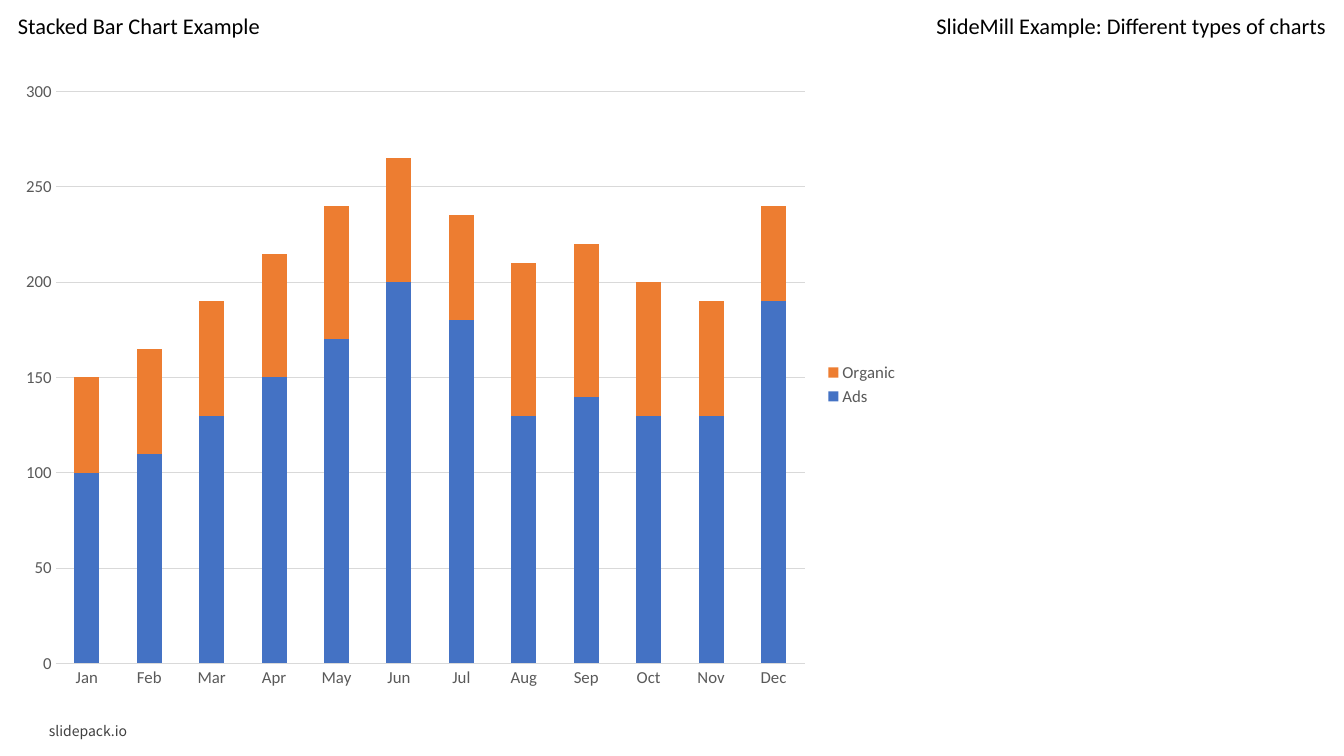
import pptx
import pptx.chart.data
import pptx.dml.color
import pptx.enum.chart
import pptx.enum.text
import pptx.util

EMU_PER_PX = 914400 / 100.8
COLORS = {
    "text": "000000",
    "footer": "404040",
    "axis_text": "595959",
    "grid": "D9D9D9",
    "ads": "4472C4",
    "organic": "ED7D31",
}
MONTHS = ["Jan", "Feb", "Mar", "Apr", "May", "Jun",
          "Jul", "Aug", "Sep", "Oct", "Nov", "Dec"]
ADS = [100, 110, 130, 150, 170, 200, 180, 130, 140, 130, 130, 190]
ORGANIC = [50, 55, 60, 65, 70, 65, 55, 80, 80, 70, 60, 50]


def px(n):
    return pptx.util.Emu(round(n * EMU_PER_PX))


def rgb(name):
    return pptx.dml.color.RGBColor.from_string(COLORS[name])


def set_font(font, size, color, name="Calibri"):
    font.name = name
    font.size = pptx.util.Pt(size)
    font.color.rgb = rgb(color)


def set_line(line, color):
    line.color.rgb = rgb(color)
    line.width = pptx.util.Pt(0.75)


def add_text(s, box, text, align=pptx.enum.text.PP_ALIGN.LEFT):
    """Add a one-line text box and return its shape."""
    sp = s.shapes.add_textbox(*map(px, box))
    tf = sp.text_frame
    tf.text = text
    tf.word_wrap = False
    p = tf.paragraphs[0]
    p.alignment = align
    set_font(p.runs[0].font, 16, "text")
    return sp


def add_footer(s, box, text):
    tf = add_text(s, box, text).text_frame
    tf.word_wrap = True
    tf.vertical_anchor = pptx.enum.text.MSO_ANCHOR.MIDDLE
    set_font(tf.paragraphs[0].runs[0].font, 10, "footer", "Noto Sans CJK JP")


def style_axes(chart):
    for axis in (chart.category_axis, chart.value_axis):
        axis.major_tick_mark = pptx.enum.chart.XL_TICK_MARK.NONE
        axis.minor_tick_mark = pptx.enum.chart.XL_TICK_MARK.NONE
        set_font(axis.tick_labels.font, 12, "axis_text")
    set_line(chart.category_axis.format.line, "grid")
    values = chart.value_axis
    values.minimum_scale = 0
    values.maximum_scale = 300
    values.major_unit = 50
    values.format.line.fill.background()
    values.has_major_gridlines = True
    set_line(values.major_gridlines.format.line, "grid")


def add_stacked_chart(s, box):
    data = pptx.chart.data.CategoryChartData()
    data.categories = MONTHS
    data.add_series("Ads", ADS)
    data.add_series("Organic", ORGANIC)
    chart = s.shapes.add_chart(
        pptx.enum.chart.XL_CHART_TYPE.COLUMN_STACKED, *map(px, box), data).chart
    set_font(chart.font, 10, "text")
    chart.has_title = False
    style_axes(chart)

    plot = chart.plots[0]
    plot.gap_width = 150
    plot.overlap = 100
    plot.vary_by_categories = False
    for series, color in zip(plot.series, ("ads", "organic")):
        series.format.fill.solid()
        series.format.fill.fore_color.rgb = rgb(color)

    chart.has_legend = True
    chart.legend.position = pptx.enum.chart.XL_LEGEND_POSITION.RIGHT
    chart.legend.include_in_layout = False
    set_font(chart.legend.font, 12, "axis_text")


def main():
    prs = pptx.Presentation()
    prs.slide_width = px(1344)
    prs.slide_height = px(756)
    s = prs.slides.add_slide(prs.slide_layouts[6])
    add_footer(s, (39, 718, 293, 25), "slidepack.io")
    add_text(s, (909, 7, 427, 37), "SlideMill Example: Different types of charts",
             pptx.enum.text.PP_ALIGN.RIGHT)
    add_stacked_chart(s, (8, 69, 901, 631))
    add_text(s, (8, 7, 265, 37), "Stacked Bar Chart Example")
    prs.save("out.pptx")


if __name__ == "__main__":
    main()
